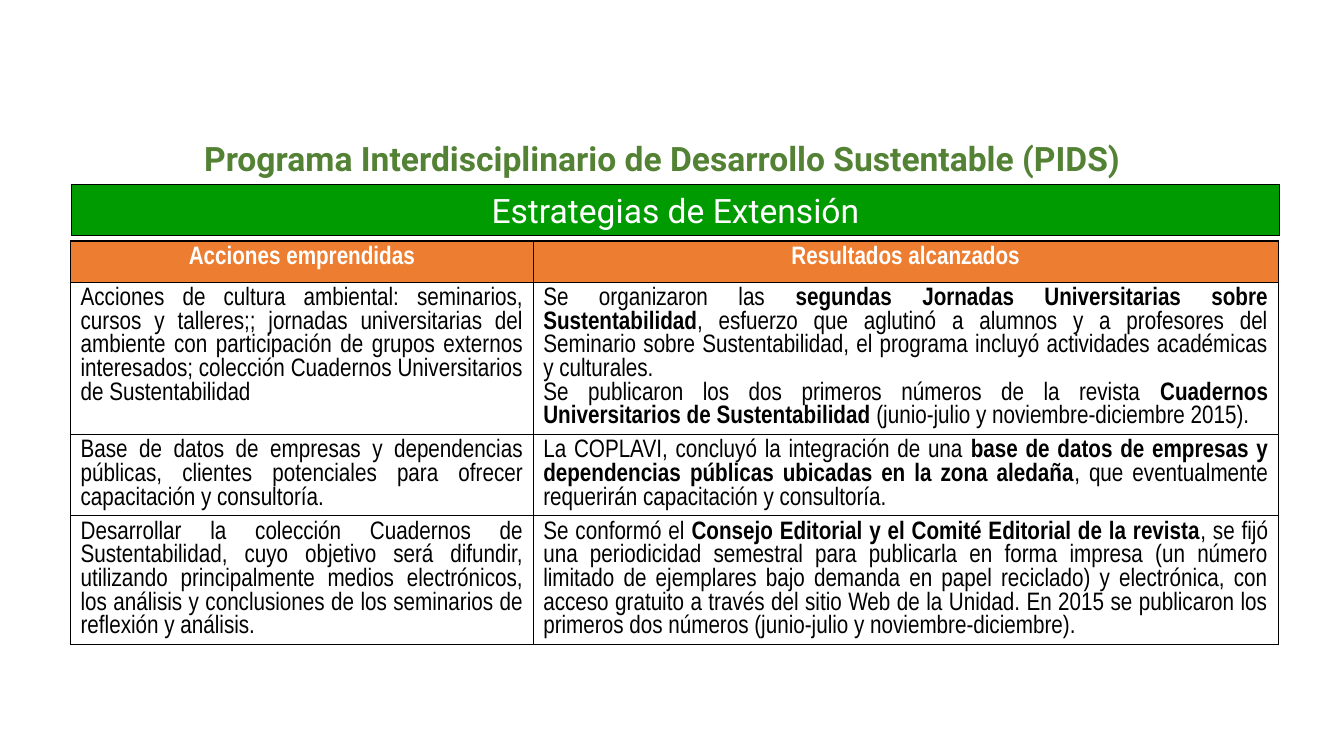
"""Builds the slide on the extension strategies of the PIDS programme."""
from dataclasses import dataclass

from lxml import etree
from pptx import Presentation
from pptx.dml.color import RGBColor
from pptx.enum.shapes import MSO_SHAPE
from pptx.enum.text import MSO_ANCHOR, MSO_AUTO_SIZE, PP_ALIGN
from pptx.oxml.ns import qn
from pptx.shapes.autoshape import Shape
from pptx.slide import Slide
from pptx.table import _Cell
from pptx.text.text import TextFrame
from pptx.util import Pt

RECTANGLE = MSO_SHAPE.RECTANGLE
CENTER, JUSTIFY = PP_ALIGN.CENTER, PP_ALIGN.JUSTIFY
MIDDLE = MSO_ANCHOR.MIDDLE
GROW = MSO_AUTO_SIZE.SHAPE_TO_FIT_TEXT

COLORS = {
    "banner": "009B00",
    "header": "ED7D31",
    "title": "548235",
    "ink": "000000",
    "paper": "FFFFFF",
}
HEADING_FONT, TABLE_FONT = "Roboto", "Arial Narrow"
COLUMN_WIDTHS = (330.5, 532.1)
ROW_HEIGHT = 29.5
BORDER_SIDES = ("a:lnL", "a:lnR", "a:lnT", "a:lnB")


@dataclass(frozen=True)
class Strategy:
    """One row of the table; double asterisks enclose bold words."""
    action: str
    result: str


HEADER = Strategy("**Acciones emprendidas**", "**Resultados alcanzados**")
STRATEGIES = (
    Strategy(
        "Acciones de cultura ambiental: seminarios, cursos y talleres;; jornadas "
        "universitarias del ambiente con participación de grupos externos "
        "interesados; colección Cuadernos Universitarios de Sustentabilidad",
        "Se organizaron las **segundas Jornadas Universitarias sobre "
        "Sustentabilidad**, esfuerzo que aglutinó a alumnos y a profesores del "
        "Seminario sobre Sustentabilidad, el programa incluyó actividades "
        "académicas y culturales.\n"
        "Se publicaron los dos primeros números de la revista **Cuadernos "
        "Universitarios de Sustentabilidad **(junio-julio y "
        "noviembre-diciembre 2015).",
    ),
    Strategy(
        "Base de datos de empresas y dependencias públicas, clientes potenciales "
        "para ofrecer capacitación y consultoría.",
        "La COPLAVI, concluyó la integración de una **base de datos de empresas y "
        "dependencias públicas ubicadas en la zona aledaña**, que eventualmente "
        "requerirán capacitación y consultoría.",
    ),
    Strategy(
        "Desarrollar la colección Cuadernos de Sustentabilidad, cuyo objetivo será "
        "difundir, utilizando principalmente medios electrónicos, los análisis y "
        "conclusiones de los seminarios de reflexión y análisis.",
        "Se conformó el **Consejo Editorial y el Comité Editorial de la "
        "revista**, se fijó una periodicidad semestral para publicarla en forma "
        "impresa (un número limitado de ejemplares bajo demanda en papel "
        "reciclado) y electrónica, con acceso gratuito a través del sitio Web de "
        "la Unidad. En 2015 se publicaron los primeros dos números (junio-julio y "
        "noviembre-diciembre).",
    ),
)


def write(frame: TextFrame, text: str, *, font: str, size: float, color: str,
          align: PP_ALIGN) -> None:
    """Fill a frame with one paragraph per line of marked-up text."""
    for index, line in enumerate(text.split("\n")):
        paragraph = frame.add_paragraph() if index else frame.paragraphs[0]
        paragraph.alignment = align
        for position, words in enumerate(line.split("**")):
            if words:
                run = paragraph.add_run()
                run.text = words
                run.font.name = font
                run.font.size = Pt(size)
                run.font.bold = position % 2 == 1
                run.font.color.rgb = RGBColor.from_string(COLORS[color])


def write_heading(heading: Shape, text: str, color: str) -> None:
    """Write a centred heading into a box that grows with its text."""
    frame = heading.text_frame
    frame.word_wrap = True
    frame.auto_size = GROW
    write(frame, text, font=HEADING_FONT, size=24, color=color, align=CENTER)


def add_borders(cell: _Cell) -> None:
    """Draw a thin line on each side of a cell."""
    properties = cell._tc.get_or_add_tcPr()
    for index, side in enumerate(BORDER_SIDES):
        border = etree.Element(qn(side), w=str(Pt(1)))
        fill = etree.SubElement(border, qn("a:solidFill"))
        etree.SubElement(fill, qn("a:srgbClr"), val=COLORS["ink"])
        properties.insert(index, border)


def add_strategy_table(slide: Slide) -> None:
    """Add the table of actions and results."""
    rows = (HEADER, *STRATEGIES)
    table = slide.shapes.add_table(
        len(rows), len(COLUMN_WIDTHS), Pt(50.4), Pt(172.1),
        Pt(sum(COLUMN_WIDTHS)), Pt(ROW_HEIGHT * len(rows))).table
    table.horz_banding = False
    for column, width in zip(table.columns, COLUMN_WIDTHS):
        column.width = Pt(width)
    for row_index, strategy in enumerate(rows):
        table.rows[row_index].height = Pt(ROW_HEIGHT)
        is_header = strategy is HEADER
        for column_index, text in enumerate((strategy.action, strategy.result)):
            cell = table.cell(row_index, column_index)
            if is_header:
                cell.fill.solid()
                cell.fill.fore_color.rgb = RGBColor.from_string(COLORS["header"])
            else:
                cell.fill.background()
            add_borders(cell)
            write(cell.text_frame, text, font=TABLE_FONT, size=18,
                  color="paper" if is_header else "ink",
                  align=CENTER if is_header else JUSTIFY)


def add_banner(slide: Slide) -> None:
    """Add the green banner above the table."""
    banner = slide.shapes.add_shape(
        RECTANGLE, Pt(51.1), Pt(131.8), Pt(862.6), Pt(36.4))
    banner.shadow.inherit = False
    banner.fill.solid()
    banner.fill.fore_color.rgb = RGBColor.from_string(COLORS["banner"])
    banner.line.color.rgb = RGBColor.from_string(COLORS["ink"])
    banner.line.width = Pt(0.75)
    banner.text_frame.vertical_anchor = MIDDLE
    write_heading(banner, "Estrategias de Extensión", "paper")


def add_title(slide: Slide) -> None:
    """Add the name of the programme."""
    title = slide.shapes.add_textbox(Pt(73.4), Pt(95), Pt(799.2), Pt(36.4))
    write_heading(
        title, "**Programa Interdisciplinario de Desarrollo Sustentable (PIDS)**",
        "title")


def main() -> None:
    """Build and save the presentation."""
    presentation = Presentation()
    presentation.slide_width, presentation.slide_height = Pt(960), Pt(540)
    slide = presentation.slides.add_slide(presentation.slide_layouts[6])
    add_strategy_table(slide)
    add_banner(slide)
    add_title(slide)
    presentation.save("out.pptx")


if __name__ == "__main__":
    main()
